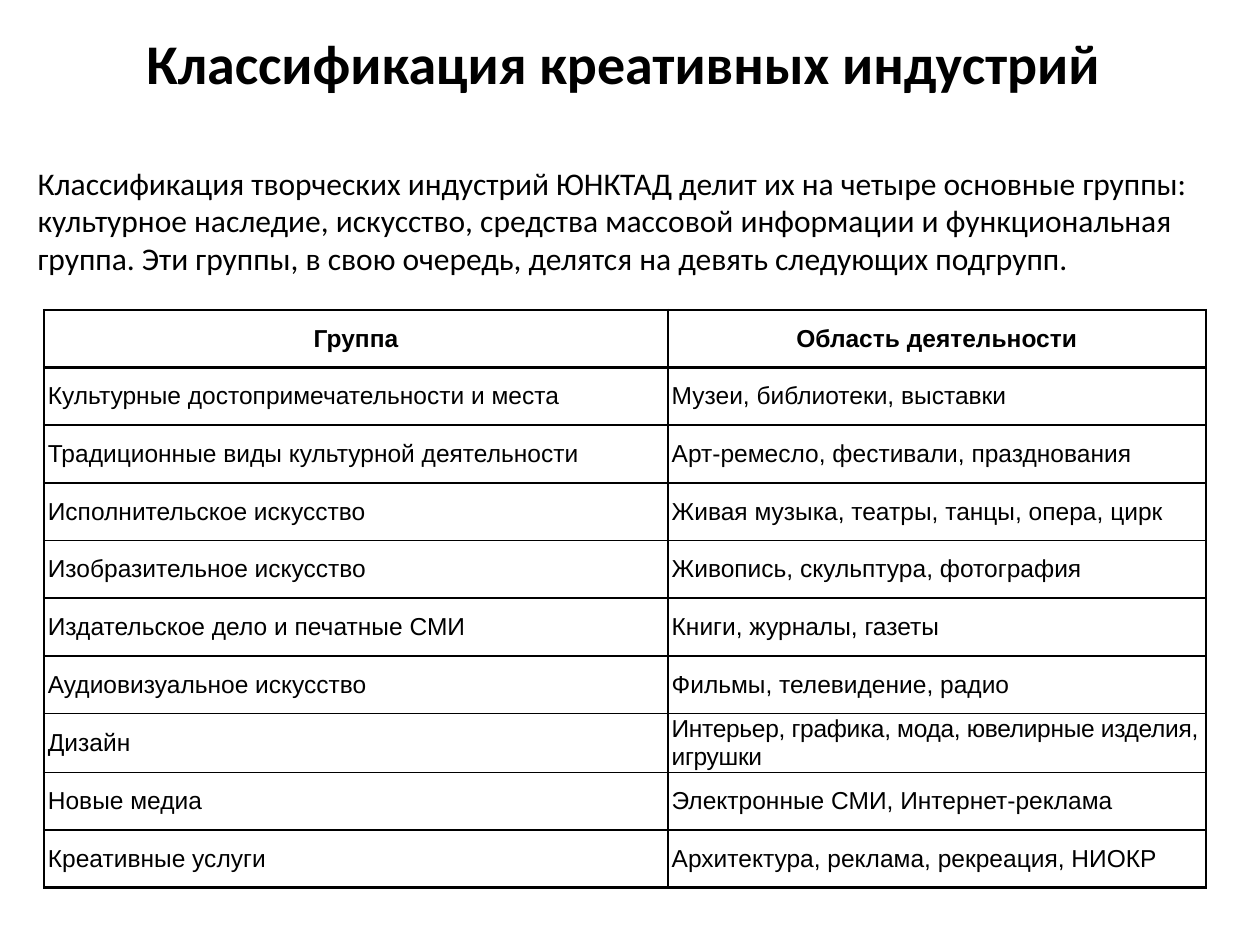
from dataclasses import dataclass
from typing import NamedTuple

from lxml.etree import SubElement
from pptx import Presentation
from pptx.dml.color import RGBColor
from pptx.enum.text import MSO_ANCHOR, PP_ALIGN
from pptx.oxml.ns import qn
from pptx.util import Inches, Pt

SLIDE_W, SLIDE_H = 10, 7.5


@dataclass(frozen=True)
class Theme:
    ink: str = "000000"
    heading_font: str = "Calibri"
    table_font: str = "Arial"
    title_size: float = 32
    body_size: float = 18
    table_size: float = 14
    outer_line: float = 1.5
    inner_line: float = 1


class Box(NamedTuple):
    """Position and size as shares of the slide."""
    left: float
    top: float
    width: float
    height: float

    def emu(self) -> list[int]:
        return [Inches(share * side) for share, side in
                zip(self, (SLIDE_W, SLIDE_H, SLIDE_W, SLIDE_H))]


class Industry(NamedTuple):
    group: str
    activity: str
    spacing: float = 0


THEME = Theme()
TITLE_BOX = Box(0, 0, 1, 0.132)
INTRO_BOX = Box(0.02, 1 / 6, 0.961, 0.83)
TABLE_BOX = Box(0.035, 0.328, 0.922, 0.61)
COLUMN_SHARES = (0.537, 0.463)

TITLE = "Классификация креативных индустрий "
INTRO = ("Классификация творческих индустрий ЮНКТАД делит их на четыре основные "
         "группы: культурное наследие, искусство, средства массовой информации и "
         "функциональная группа. Эти группы, в свою очередь, делятся на девять "
         "следующих подгрупп.")
HEADER = Industry("Группа", "Область деятельности")
INDUSTRIES = [
    Industry("Культурные достопримечательности и места", "Музеи, библиотеки, выставки"),
    Industry("Традиционные виды культурной деятельности",
             "Арт-ремесло, фестивали, празднования"),
    Industry("Исполнительское искусство", "Живая музыка, театры, танцы, опера, цирк"),
    Industry("Изобразительное искусство", "Живопись, скульптура, фотография"),
    Industry("Издательское дело и печатные СМИ", "Книги, журналы, газеты"),
    Industry("Аудиовизуальное искусство", "Фильмы, телевидение, радио"),
    Industry("Дизайн", "Интерьер, графика, мода, ювелирные изделия, игрушки", -0.2),
    Industry("Новые медиа", "Электронные СМИ, Интернет-реклама"),
    Industry("Креативные услуги", "Архитектура, реклама, рекреация, НИОКР"),
]


def write(tf, text: str, *, size: float, font: str, bold: bool = False,
          align=PP_ALIGN.LEFT, spacing: float = 0) -> None:
    p = tf.paragraphs[0]
    p.alignment = align
    r = p.add_run()
    r.text = text
    r.font.size = Pt(size)
    r.font.name = font
    r.font.bold = bold
    r.font.color.rgb = RGBColor.from_string(THEME.ink)
    if spacing:
        r.font._element.set("spc", str(round(spacing * 100)))


def add_text(s, box: Box, text: str, anchor=MSO_ANCHOR.TOP, **style) -> None:
    tf = s.shapes.add_textbox(*box.emu()).text_frame
    tf.word_wrap = True
    tf.vertical_anchor = anchor
    write(tf, text, **style)


def set_borders(cell, **widths: float) -> None:
    """Draw cell borders; the keys L, R, T, B come in schema order."""
    tc_pr = cell._tc.get_or_add_tcPr()
    for side, width in widths.items():
        ln = SubElement(tc_pr, qn(f"a:ln{side}"), w=str(Pt(width)))
        fill = SubElement(ln, qn("a:solidFill"))
        SubElement(fill, qn("a:srgbClr"), val=THEME.ink)


def add_industry_table(s, box: Box, rows: list[Industry]) -> None:
    last_row, last_col = len(rows) - 1, len(COLUMN_SHARES) - 1
    left, top, width, height = box.emu()
    table = s.shapes.add_table(len(rows), len(COLUMN_SHARES),
                               left, top, width, height).table
    table.first_row = table.horz_banding = False
    for column, share in zip(table.columns, COLUMN_SHARES):
        column.width = round(width * share)

    def line(is_outer: bool) -> float:
        return THEME.outer_line if is_outer else THEME.inner_line

    for i, row in enumerate(rows):
        is_header = i == 0
        for j, text in enumerate((row.group, row.activity)):
            cell = table.cell(i, j)
            cell.margin_left = cell.margin_right = Inches(0.03)
            cell.margin_top = cell.margin_bottom = 0
            cell.vertical_anchor = MSO_ANCHOR.MIDDLE
            set_borders(cell, L=line(j == 0), R=line(j == last_col),
                        T=line(i <= 1), B=line(i in (0, last_row)))
            cell.fill.background()
            write(cell.text_frame, text, size=THEME.table_size,
                  font=THEME.table_font, bold=is_header,
                  align=PP_ALIGN.CENTER if is_header else PP_ALIGN.LEFT,
                  spacing=row.spacing if j == last_col else 0)


def main() -> None:
    prs = Presentation()
    prs.slide_width, prs.slide_height = Inches(SLIDE_W), Inches(SLIDE_H)
    s = prs.slides.add_slide(prs.slide_layouts[6])
    add_text(s, TITLE_BOX, TITLE, MSO_ANCHOR.MIDDLE, size=THEME.title_size,
             font=THEME.heading_font, bold=True, align=PP_ALIGN.CENTER)
    add_text(s, INTRO_BOX, INTRO, size=THEME.body_size, font=THEME.heading_font)
    add_industry_table(s, TABLE_BOX, [HEADER, *INDUSTRIES])
    prs.save("out.pptx")


if __name__ == "__main__":
    main()
